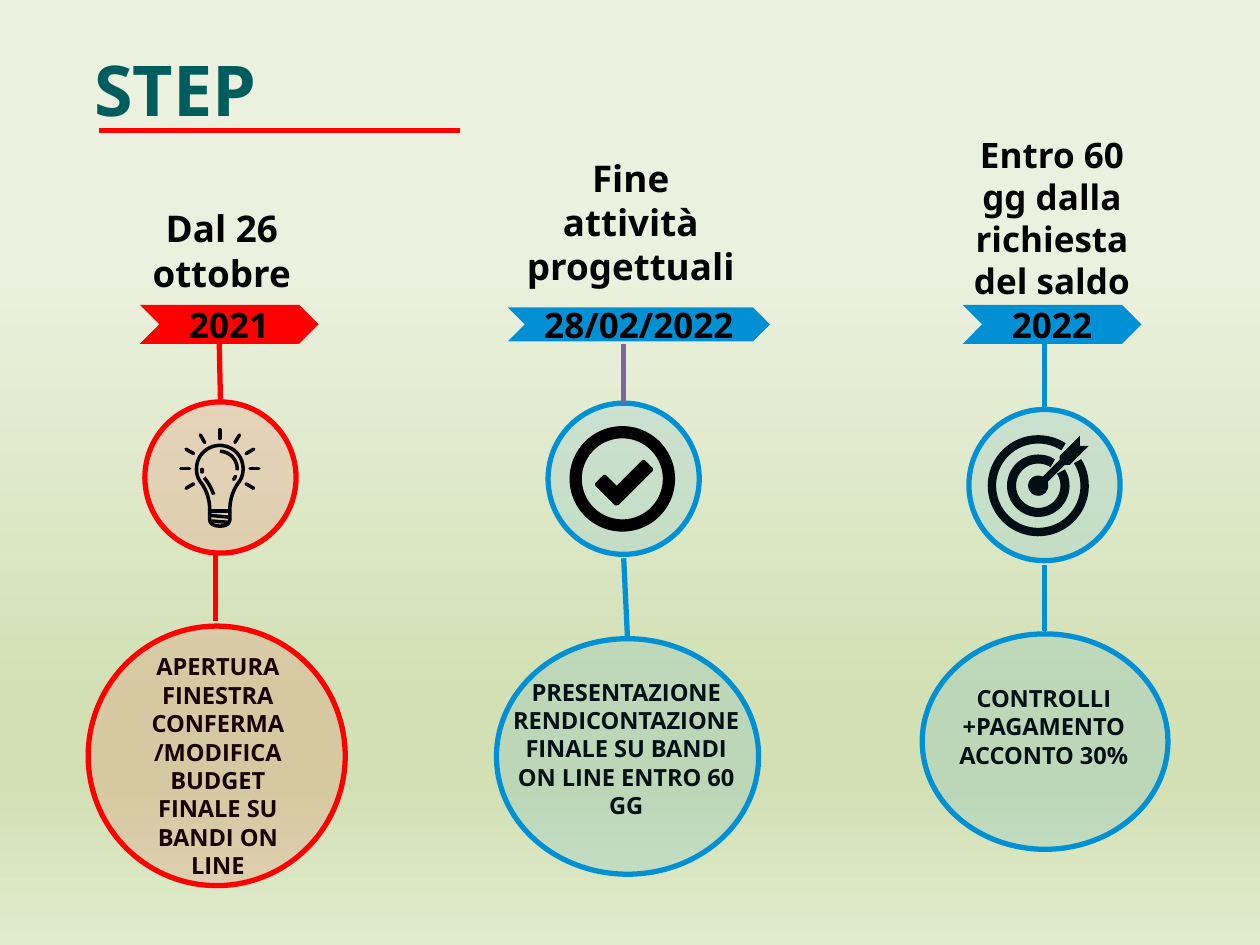
from dataclasses import dataclass
from math import cos, radians, sin

from lxml import etree
from pptx import Presentation
from pptx.dml.color import RGBColor
from pptx.enum.shapes import MSO_CONNECTOR as LINE, MSO_SHAPE as SHAPE
from pptx.enum.text import MSO_ANCHOR as ANCHOR, MSO_AUTO_SIZE as FIT, PP_ALIGN as ALIGN
from pptx.oxml import parse_xml
from pptx.oxml.ns import nsdecls, qn
from pptx.util import Pt


@dataclass(frozen=True)
class Theme:
    red: str = "FF0000"
    blue: str = "0190D4"
    purple: str = "8064A2"
    teal: str = "005D5D"
    black: str = "000000"
    head_font: str = "Noto Sans"
    body_font: str = "Open Sans"
    title_size: float = 40
    banner_size: float = 20
    note_size: float = 13.5
    rule: float = 3
    tint: int = 10
    backdrop: tuple = ((28, "EBF1DE"), (74, "D2E0B4"), (83, "D2E0B4"), (100, "E1EBCD"))


T = Theme()
UNIT = 0.72  # icon grid step in points
DISC = 86.4  # diameter of an icon disc


@dataclass
class Step:
    """One column; places are relative to the column's box."""
    left: float
    color: str
    label: str
    label_size: float
    label_box: tuple
    year: str
    banner_box: tuple
    icon: callable
    icon_on_top: bool
    disc_top: float
    note: str
    note_box: tuple
    bubble_box: tuple
    stems: tuple
    stem_color: str


def rgb(color):
    return RGBColor.from_string(color)


def place(box, x=0, y=0):
    left, top, w, h = box
    return Pt(x + left), Pt(y + top), Pt(w), Pt(h)


def style(sp, fill=None, line=None, width=T.rule, alpha=None):
    sp.shadow.inherit = False
    if fill:
        sp.fill.solid()
        sp.fill.fore_color.rgb = rgb(fill)
        if alpha:
            clr = sp.fill._xPr.find(".//" + qn("a:srgbClr"))
            etree.SubElement(clr, qn("a:alpha")).set("val", str(alpha * 1000))
    else:
        sp.fill.background()
    if line:
        sp.line.color.rgb = rgb(line)
        sp.line.width = Pt(width)
    else:
        sp.line.fill.background()


def shape(s, kind, box, x=0, y=0, **look):
    sp = s.shapes.add_shape(kind, *place(box, x, y))
    style(sp, **look)
    return sp


def line(s, x1, y1, x2, y2, color, width=T.rule, cap="flat"):
    ln = s.shapes.add_connector(LINE.STRAIGHT, Pt(x1), Pt(y1), Pt(x2), Pt(y2))
    ln.line.color.rgb = rgb(color)
    ln.line.width = Pt(width)
    ln.line._get_or_add_ln().set("cap", cap)
    etree.SubElement(ln._element.spPr, qn("a:effectLst"))


def write(tf, text, size, font, color=T.black, align=ALIGN.CENTER, tight=True):
    tf.text = text
    p = tf.paragraphs[0]
    p.alignment = align
    if tight:  # fixed pitch, with the first line kept at its natural height
        tf.word_wrap = True
        tf.auto_size = FIT.NONE
        tf.vertical_anchor = ANCHOR.TOP
        tf.margin_top = Pt(3.6 + 0.09 * size)
        p.line_spacing = Pt(1.2 * size)
    r = p.runs[0]
    r.font.size, r.font.name, r.font.bold = Pt(size), font, True
    r.font.color.rgb = rgb(color)


def text(s, box, x, y, words, size, font):
    write(s.shapes.add_textbox(*place(box, x, y)).text_frame, words, size, font)


def outline(s, x, y, points, close=False, **look):
    pts = [(Pt(x + u * UNIT), Pt(y + v * UNIT)) for u, v in points]
    fb = s.shapes.build_freeform(*pts[0])
    fb.add_line_segments(pts[1:], close=close)
    style(fb.convert_to_shape(), **look)


def bezier(a, b, c, d, n=10):
    ts = [i / n for i in range(n + 1)]
    return [tuple((1 - t) ** 3 * a[k] + 3 * (1 - t) ** 2 * t * b[k]
                  + 3 * (1 - t) * t * t * c[k] + t ** 3 * d[k] for k in (0, 1)) for t in ts]


def arc(cx, cy, radius, start, end, n=60):
    angles = [radians(start + (end - start) * i / n) for i in range(n + 1)]
    return [(cx + radius * cos(a), cy - radius * sin(a)) for a in angles]


# Icons, drawn on a grid from the disc's top left corner
def bulb(s, x, y):
    cx, cy = 59.5, 53
    half = (arc(cx, cy, 18.5, 90, 0, 16)
            + bezier((78, 53), (78, 57), (77, 61), (74, 64.5))
            + bezier((74, 64.5), (70, 70), (67.5, 78), (67.5, 85))
            + bezier((67.5, 93), (67.5, 96.5), (65, 98.5), (cx, 98.5)))
    mirrored = [(2 * cx - u, v) for u, v in reversed(half)]
    outline(s, x, y, half + mirrored, close=True, line=T.black, width=2)
    glints = (arc(cx, cy, 13.8, 90, -5, 16),
              bezier((47, 60), (51, 65), (53, 69), (54.5, 73.5)))
    for glint in glints:
        outline(s, x, y, glint, line=T.black, width=2)
    rays = [arc(cx, cy, r, a, a, 1)[0] + arc(cx, cy, r + 7, a, a, 1)[0]
            for a in range(-30, 211, 30) for r in (24,)]
    bands = [(52, 86.5, 67, 86.5), (52, 90, 67, 91.5), (53, 94.5, 66, 95.5)]
    sparks = [(45.5, 53.5, 45.5, 55.5), (72, 59, 70.5, 61.5)]
    for u1, v1, u2, v2 in rays + bands + sparks:
        line(s, x + u1 * UNIT, y + v1 * UNIT, x + u2 * UNIT, y + v2 * UNIT,
             T.black, 2, "rnd")


def check(s, x, y):
    for box, turn in (((26.6, 45.4, 18, 8.6), 45), ((32.4, 41, 29.5, 8.6), 135)):
        shape(s, SHAPE.ROUNDED_RECTANGLE, box, x, y, fill=T.black).rotation = turn
    shape(s, SHAPE.OVAL, (15.8, 16.6, 53.3, 53.3), x, y, line=T.black, width=7)


def target(s, x, y):
    cx, cy = 55, 60.5
    for radius, width in ((36.8, 4.8), (21.2, 5.2)):
        outline(s, x, y, arc(cx, cy, radius, 57, 392), line=T.black, width=width)
    outline(s, x, y, arc(cx, cy, 8, 0, 360), close=True, fill=T.black)
    arrow = [(88, 21), (88, 29), (95, 29), (80, 44), (76, 44),
             (56, 64), (52, 60), (72, 40), (72, 37)]
    outline(s, x, y, arrow, close=True, fill=T.black)


def backdrop(s):
    stops = "".join(f'<a:gs pos="{pos * 1000}"><a:srgbClr val="{c}"/></a:gs>'
                    for pos, c in T.backdrop)
    s._element.cSld.insert(0, parse_xml(
        f'<p:bg {nsdecls("p", "a")}><p:bgPr><a:gradFill><a:gsLst>{stops}</a:gsLst>'
        '<a:lin ang="5400000" scaled="0"/></a:gradFill><a:effectLst/></p:bgPr></p:bg>'))


def heading(s, x, y, w, h):
    sp = s.shapes.title
    sp.left, sp.top, sp.width, sp.height = place((x, y, w, h))
    write(sp.text_frame, "STEP", T.title_size, T.head_font, T.teal, ALIGN.LEFT)
    line(s, x + 10, y + h, x + 216, y + h, T.red)


def column(s, step, y):
    x, color = step.left, step.color
    text(s, step.label_box, x, y, step.label, step.label_size, T.head_font)
    # Dated banner
    sp = shape(s, SHAPE.CHEVRON, step.banner_box, x, y, fill=color)
    write(sp.text_frame, step.year, T.banner_size, T.head_font, tight=False)
    sp.text_frame.word_wrap = False
    sp.text_frame.vertical_anchor = ANCHOR.MIDDLE
    # Icon disc
    disc = (31.8, step.disc_top, DISC, DISC)
    if not step.icon_on_top:
        step.icon(s, x + disc[0], y + disc[1])
    shape(s, SHAPE.OVAL, disc, x, y, fill=color, line=color, alpha=T.tint)
    if step.icon_on_top:
        step.icon(s, x + disc[0], y + disc[1])
    # Bubble over its note
    text(s, step.note_box, x, y, step.note, T.note_size, T.body_font)
    shape(s, SHAPE.OVAL, step.bubble_box, x, y, fill=color, line=color, alpha=T.tint)
    for (x1, y1, x2, y2), c in zip(step.stems, (step.stem_color, color)):
        line(s, x + x1, y + y1, x + x2, y + y2, c)


STEPS = (
    Step(51, T.red, "Dal 26 ottobre", 21, (7.3, 42.3, 136.8, 58.3),
         "2021", (28.9, 104.2, 102.2, 22.3), bulb, True, 159.7,
         "APERTURA FINESTRA CONFERMA/MODIFICA BUDGET FINALE SU BANDI ON LINE",
         (26, 297.9, 95, 138.2), (-0.6, 287.8, 146.9, 148.3),
         ((74.3, 126.6, 75, 159.7), (72.1, 246.8, 72.1, 285)), T.red),
    Step(281.4, T.blue, "Fine attività progettuali", 21, (8.8, 13.5, 140.4, 83.5),
         "28/02/2022", (8.8, 105.7, 149.8, 19.4), check, True, 160.4,
         "PRESENTAZIONE RENDICONTAZIONE FINALE SU BANDI ON LINE ENTRO 60 GG",
         (3.7, 312.3, 145.4, 89.3), (2.3, 295, 149.8, 134.6),
         ((75, 126.6, 75, 160.4), (75, 249, 77.2, 295)), T.purple),
    Step(521.9, T.blue, "Entro 60 gg dalla richiesta del saldo", 20, (15.9, 0.6, 126.7, 104.4),
         "2022", (28.2, 104.2, 102.2, 22.3), target, False, 164,
         "CONTROLLI +PAGAMENTO ACCONTO 30%",
         (1.5, 315.9, 146.2, 56.2), (5.1, 292.2, 140.4, 123.1),
         ((75, 125.8, 75, 163.3), (75, 252.6, 75, 290.7)), T.blue),
)


def main():
    prs = Presentation()
    prs.slide_width, prs.slide_height = Pt(720), Pt(540)
    s = prs.slides.add_slide(prs.slide_layouts[5])
    backdrop(s)
    heading(s, 46.8, 19.4, 386.6, 55.4)
    for step in STEPS:
        column(s, step, 70)
    prs.save("out.pptx")


if __name__ == "__main__":
    main()
